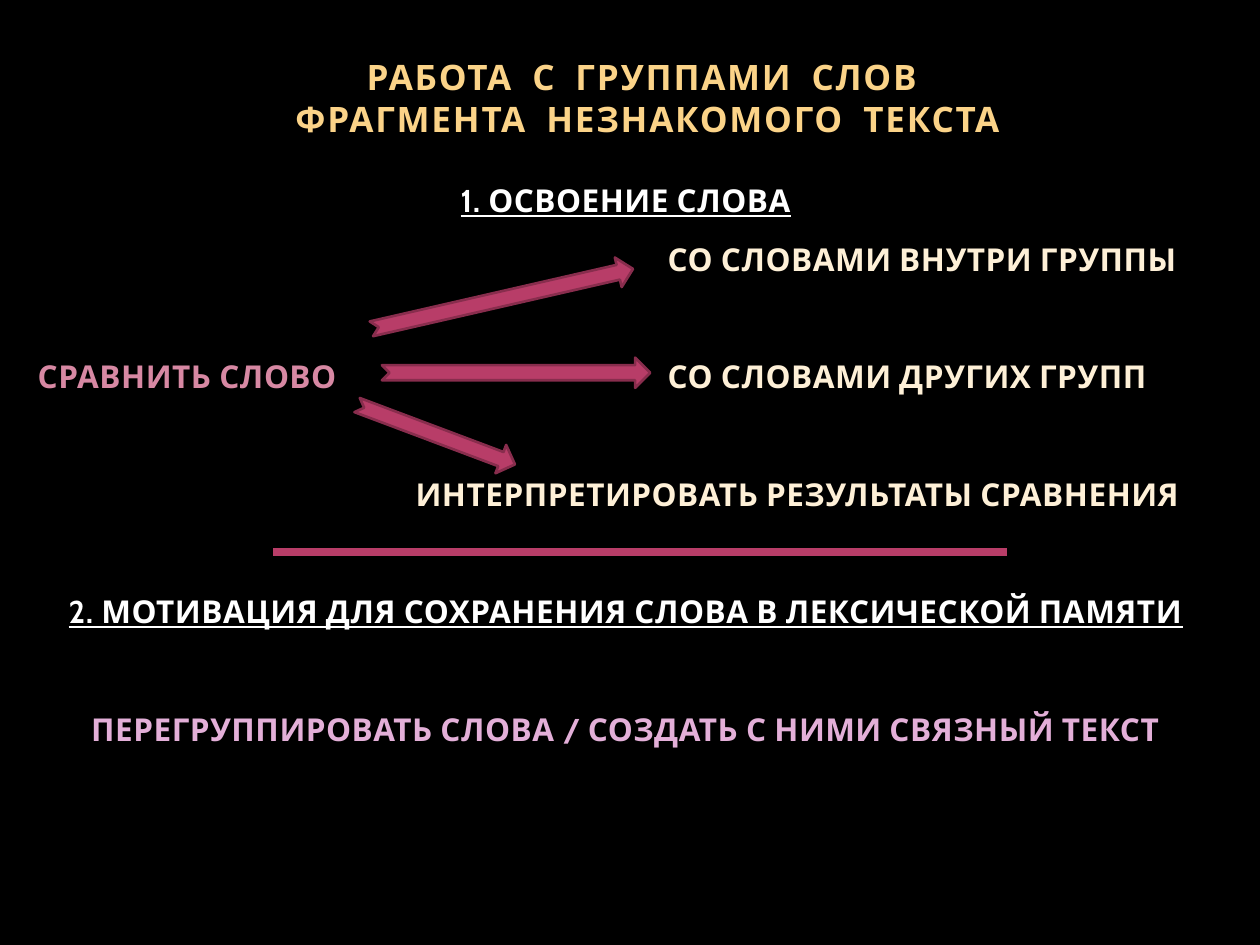
from lxml import etree
from pptx import Presentation
from pptx.dml.color import RGBColor
from pptx.enum.shapes import MSO_CONNECTOR, MSO_SHAPE
from pptx.enum.text import MSO_ANCHOR, PP_ALIGN
from pptx.oxml.ns import qn
from pptx.util import Cm, Pt

ARROW = MSO_SHAPE.NOTCHED_RIGHT_ARROW
LINE = MSO_CONNECTOR.STRAIGHT
TOP, BOTTOM = MSO_ANCHOR.TOP, MSO_ANCHOR.BOTTOM
LEFT, CENTER = PP_ALIGN.LEFT, PP_ALIGN.CENTER

BLACK = RGBColor(0x00, 0x00, 0x00)
WHITE = RGBColor(0xFF, 0xFF, 0xFF)
GOLD = RGBColor(0xFB, 0xD3, 0x88)
CREAM = RGBColor(0xFE, 0xF0, 0xD7)
ROSE = RGBColor(0xD7, 0x88, 0xA3)
LILAC = RGBColor(0xE3, 0xAF, 0xD8)
PINK = RGBColor(0xB8, 0x3D, 0x68)
WINE = RGBColor(0x88, 0x2D, 0x4D)

NEAR, FAR = 12, 45.5
INNER, OUTER = 7.62, 12.7


class Board:
    face = "Cabin"

    def __init__(self, deck):
        self.slide = deck.slides.add_slide(deck.slide_layouts[6])
        fill = self.slide.background.fill
        fill.solid()
        fill.fore_color.rgb = BLACK

    def frame(self, x, y, w, h, anchor=TOP):
        box = self.slide.shapes.add_textbox(Cm(x), Cm(y), Cm(w), Cm(h))
        frame = box.text_frame
        frame.word_wrap = True
        frame.vertical_anchor = anchor
        return frame

    def text(self, para, parts, size=18, space=0.3, align=LEFT,
             gap=0, indent=0, line=False, stop=0):
        para.alignment = align
        para.space_before = Pt(gap)
        props = para._p.get_or_add_pPr()
        props.set("marL", str(Cm(indent)))
        if stop:
            tabs = etree.SubElement(props, qn("a:tabLst"))
            etree.SubElement(tabs, qn("a:tab"), pos=str(Cm(stop)), algn="l")
        font = para.font
        font.name, font.size, font.bold = self.face, Pt(size), True
        font.underline = line
        font._rPr.set("spc", str(round(space * 100)))
        if len(parts) == 1:
            para.text = parts[0][0]
            font.color.rgb = parts[0][1]
            return
        for words, color in parts:
            run = para.add_run()
            run.text = words
            run.font.color.rgb = color

    def arrow(self, x, y, w, turn):
        shape = self.slide.shapes.add_shape(ARROW, Cm(x), Cm(y), Cm(w), Cm(0.61))
        shape.rotation = turn
        shape.shadow.inherit = False
        shape.fill.solid()
        shape.fill.fore_color.rgb = PINK
        shape.line.color.rgb = WINE
        shape.line.width = Pt(1.5)

    def rule(self, x, y, w):
        line = self.slide.shapes.add_connector(LINE, Cm(x), Cm(y), Cm(x + w), Cm(y))
        line.line.color.rgb = PINK
        line.line.width = Pt(4.5)
        etree.SubElement(line._element.spPr, qn("a:effectLst"))


def main():
    deck = Presentation()
    deck.slide_width, deck.slide_height = Cm(25.4), Cm(19.05)
    board = Board(deck)

    head = board.frame(0.99, 0.64, 23.93, 2.29, BOTTOM)
    title = "РАБОТА  С  ГРУППАМИ  СЛОВ\v ФРАГМЕНТА  НЕЗНАКОМОГО  ТЕКСТА"
    board.text(head.paragraphs[0], [(title, GOLD)], size=20, space=1, align=CENTER)

    rows = [
        ([("1. ОСВОЕНИЕ СЛОВА", WHITE)], dict(align=CENTER, line=True)),
        ([("СО СЛОВАМИ ВНУТРИ ГРУППЫ", CREAM)], dict(gap=NEAR, indent=OUTER)),
        ([("СРАВНИТЬ СЛОВО\t", ROSE), ("СО СЛОВАМИ ДРУГИХ ГРУПП", CREAM)],
         dict(gap=FAR, stop=OUTER)),
        ([("ИНТЕРПРЕТИРОВАТЬ РЕЗУЛЬТАТЫ СРАВНЕНИЯ", CREAM)],
         dict(gap=FAR, indent=INNER)),
        ([("2. МОТИВАЦИЯ ДЛЯ СОХРАНЕНИЯ СЛОВА В ЛЕКСИЧЕСКОЙ ПАМЯТИ", WHITE)],
         dict(gap=FAR, align=CENTER, line=True)),
        ([("ПЕРЕГРУППИРОВАТЬ СЛОВА / СОЗДАТЬ С НИМИ СВЯЗНЫЙ ТЕКСТ", LILAC)],
         dict(gap=FAR, align=CENTER)),
    ]
    body = board.frame(0.51, 3.53, 24.21, 14.81)
    for i, (parts, style) in enumerate(rows):
        para = body.add_paragraph() if i else body.paragraphs[0]
        board.text(para, parts, **style)

    for x, y, w, turn in [(7.42, 5.72, 5.41, 347.1),
                          (7.7, 7.21, 5.41, 0),
                          (7.09, 8.46, 3.4, 20.6)]:
        board.arrow(x, y, w, turn)
    board.rule(5.51, 11.13, 14.78)

    deck.save("out.pptx")


if __name__ == "__main__":
    main()
